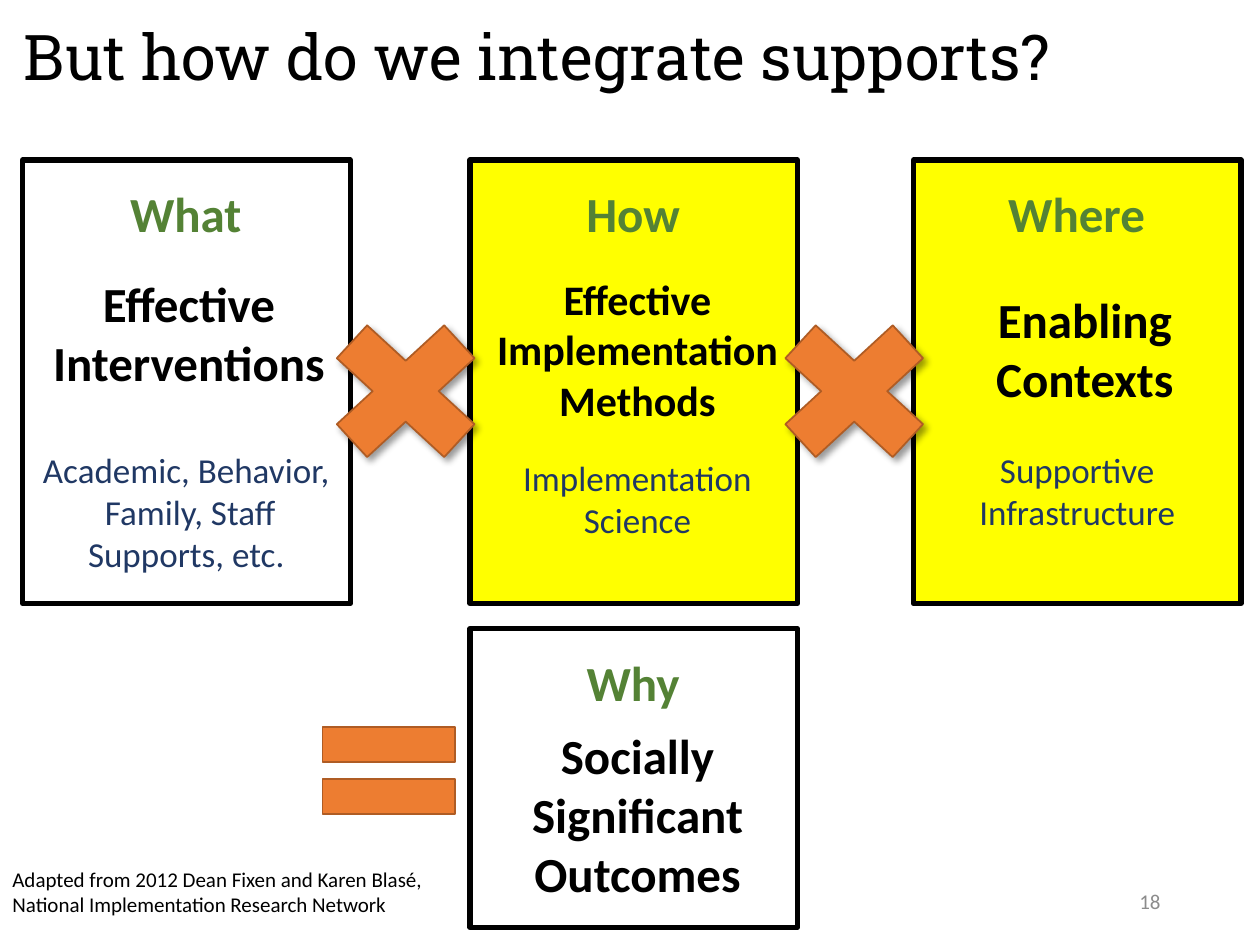
"""Build the slide on integrating supports: what times how times where equals why."""
import pptx
import pptx.util
import pptx.dml.color
import pptx.enum.shapes
import pptx.enum.text
import pptx.oxml

COLORS = {"ink": "000000", "green": "548235", "navy": "203864", "yellow": "FFFF00",
          "orange": "ED7D31", "rust": "AF5C24", "gray": "8C8C8C"}
SHADOW = (
    '<a:effectLst xmlns:a="http://schemas.openxmlformats.org/drawingml/2006/main">'
    '<a:outerShdw blurRad="50800" dist="38100" dir="2700000" algn="tl" rotWithShape="0">'
    '<a:srgbClr val="000000"><a:alpha val="40000"/></a:srgbClr>'
    '</a:outerShdw></a:effectLst>')
ALIGN = pptx.enum.text.PP_ALIGN
ANCHOR = pptx.enum.text.MSO_ANCHOR
SHAPE = pptx.enum.shapes.MSO_SHAPE


def rgb(name):
    """Return the named colour."""
    return pptx.dml.color.RGBColor.from_string(COLORS[name])


def write(frame, text, size=28, color="ink", bold=False, font="Calibri",
          align=ALIGN.CENTER, anchor=ANCHOR.TOP, wrap=True):
    """Fill a text frame with formatted text, one paragraph a line."""
    frame.text = text
    frame.word_wrap = wrap
    frame.vertical_anchor = anchor
    frame.auto_size = pptx.enum.text.MSO_AUTO_SIZE.NONE
    for paragraph in frame.paragraphs:
        paragraph.alignment = align
        paragraph.font.name = font
        paragraph.font.size = pptx.util.Pt(size)
        paragraph.font.bold = bold
        paragraph.font.color.rgb = rgb(color)


class Board:
    """Hold the style and the slide, on a grid of 100 columns and 75 rows."""

    columns, rows = 100, 75

    def __init__(self, deck):
        """Add a title-only slide to the deck."""
        self.slide = deck.slides.add_slide(deck.slide_layouts[5])
        self.column = deck.slide_width / self.columns
        self.row = deck.slide_height / self.rows

    def place(self, left, top, width, height):
        """Turn grid units into slide lengths."""
        return (round(left * self.column), round(top * self.row),
                round(width * self.column), round(height * self.row))

    def title(self, text, *box):
        """Move and fill the title placeholder."""
        heading = self.slide.shapes.title
        heading.left, heading.top, heading.width, heading.height = self.place(*box)
        write(heading.text_frame, text, size=36, font="Roboto Slab", align=ALIGN.LEFT)

    def text(self, text, *box, **style):
        """Add a text box."""
        write(self.slide.shapes.add_textbox(*self.place(*box)).text_frame, text, **style)

    def shape(self, preset, *box, fill=None, line="ink", weight=1, shadow=False):
        """Add a preset shape."""
        figure = self.slide.shapes.add_shape(preset, *self.place(*box))
        figure.shadow.inherit = False
        if shadow:
            properties = figure.fill._xPr
            properties.replace(properties.effectLst, pptx.oxml.parse_xml(SHADOW)) \
                if hasattr(properties, "effectLst") else properties.replace(
                    properties[-1], pptx.oxml.parse_xml(SHADOW))
        if fill:
            figure.fill.solid()
            figure.fill.fore_color.rgb = rgb(fill)
        else:
            figure.fill.background()
        figure.line.color.rgb = rgb(line)
        figure.line.width = pptx.util.Pt(weight)

    def card(self, question, left, top, height, fill=None):
        """Add a framed card headed by its question."""
        self.shape(SHAPE.RECTANGLE, left, top, 26, height, fill=fill, weight=3)
        self.text(question, left - 0.35, top + 1.4, 26.6, 5.7, color="green", bold=True)


def main():
    """Build and save the slide."""
    deck = pptx.Presentation()
    deck.slide_width, deck.slide_height = pptx.util.Inches(10), pptx.util.Inches(7.5)
    board = Board(deck)
    board.title("But how do we integrate supports?", 0.9, 0.9, 97.6, 7.1)

    factors = [
        ("What", 1.8, None, "Effective Interventions", 1.7, 21.2, 28,
         "Academic, Behavior, \nFamily, Staff Supports, etc. ", 1.8, 35.1),
        ("How", 37.3, "yellow", "Effective Implementation Methods", 37.3, 21.2, 24,
         "Implementation Science", 37.3, 35.7),
        ("Where", 72.5, "yellow", "Enabling Contexts", 72.8, 22.5, 28,
         "Supportive Infrastructure", 72.2, 35.1),
    ]
    for (question, left, fill, answer, answer_left, answer_top, size,
         detail, detail_left, detail_top) in factors:
        board.card(question, left, 12.7, 35.2, fill)
        board.text(answer, answer_left, answer_top, 26.6, 13.1, size=size, bold=True)
        board.text(detail, detail_left, detail_top, 26.6, 11.1, size=20, color="navy")

    board.card("Why", 37.3, 49.9, 23.7)
    board.text("Socially Significant Outcomes", 37.3, 57.1, 26.6, 15.1, bold=True)

    for left in (24, 59.6):
        board.shape(SHAPE.MATH_MULTIPLY, left, 23.5, 16.4, 15.1,
                    fill="orange", line="rust", shadow=True)
    board.shape(SHAPE.MATH_EQUAL, 23.7, 55.3, 14.3, 11.7, fill="orange", line="rust")

    board.text("Adapted from 2012 Dean Fixen and Karen Blasé,\v"
               "National Implementation Research Network",
               0, 68.3, 34.9, 5, size=12, align=ALIGN.LEFT, wrap=False)
    board.text("18", 70.6, 69.5, 22.5, 4, size=12, color="gray",
               align=ALIGN.RIGHT, anchor=ANCHOR.MIDDLE)
    deck.save("out.pptx")


if __name__ == "__main__":
    main()
